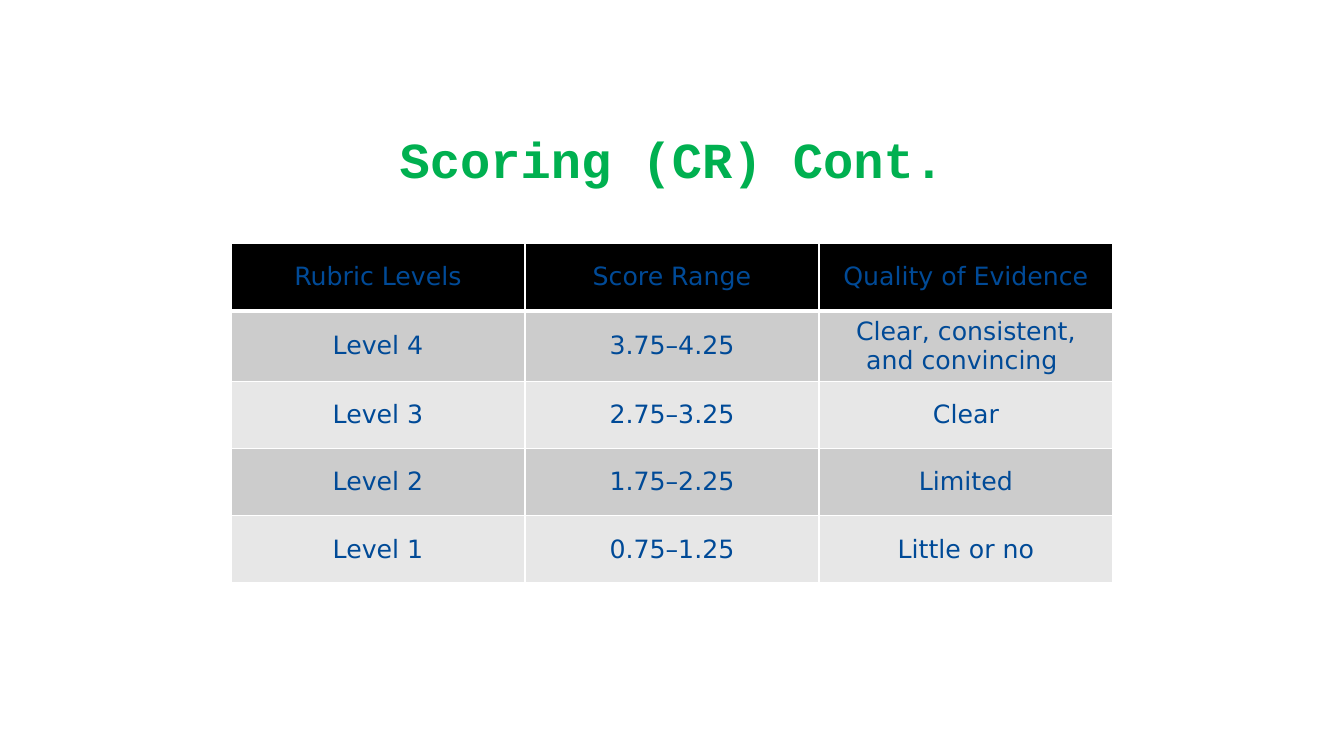
from dataclasses import dataclass

from lxml import etree
from pptx import Presentation
from pptx.dml.color import RGBColor
from pptx.enum.text import MSO_ANCHOR, PP_ALIGN
from pptx.oxml.ns import qn
from pptx.util import Inches, Pt

CENTER = PP_ALIGN.CENTER
MIDDLE = MSO_ANCHOR.MIDDLE
BOTTOM = MSO_ANCHOR.BOTTOM
BLANK = 6
GRID_COLS, GRID_ROWS = 160, 90

RUBRIC = [
    ("Rubric Levels", "Score Range", "Quality of Evidence"),
    ("Level 4", "3.75–4.25", "Clear, consistent, and convincing "),
    ("Level 3", "2.75–3.25", "Clear"),
    ("Level 2", "1.75–2.25", "Limited"),
    ("Level 1", "0.75–1.25", "Little or no"),
]


@dataclass(frozen=True)
class Theme:
    title_font: str = "Courier New"
    title_size: float = 36
    title_color: str = "00B050"
    body_font: str = "DejaVu Sans"
    body_size: float = 18
    body_color: str = "004A97"
    header_fill: str = "000000"
    band_fills: tuple = ("CCCCCC", "E7E7E7")
    border_color: str = "FFFFFF"
    border: float = 1
    header_border: float = 3


class SlideBuilder:
    def __init__(self, prs, theme):
        self.theme = theme
        self.col = prs.slide_width / GRID_COLS
        self.row = prs.slide_height / GRID_ROWS
        self.s = prs.slides.add_slide(prs.slide_layouts[BLANK])

    def box(self, left, top, width, height):
        return (round(left * self.col), round(top * self.row),
                round(width * self.col), round(height * self.row))

    def set_text(self, p, text, font, size, color, bold=False):
        p.text = text
        p.alignment = CENTER
        for r in p.runs:
            r.font.name = font
            r.font.size = Pt(size)
            r.font.bold = bold
            r.font.color.rgb = RGBColor.from_string(color)

    def title(self, text, *area):
        t = self.theme
        tf = self.s.shapes.add_textbox(*self.box(*area)).text_frame
        tf.word_wrap = True
        tf.vertical_anchor = BOTTOM
        p = tf.paragraphs[0]
        self.set_text(p, text, t.title_font, t.title_size, t.title_color, True)
        p.line_spacing = 0.8

    def borders(self, cell, bottom):
        t = self.theme
        tc_pr = cell._tc.get_or_add_tcPr()
        widths = {"lnL": t.border, "lnR": t.border, "lnT": t.border, "lnB": bottom}
        for side, width in widths.items():
            ln = etree.SubElement(tc_pr, qn(f"a:{side}"), w=str(Pt(width)))
            fill = etree.SubElement(ln, qn("a:solidFill"))
            etree.SubElement(fill, qn("a:srgbClr"), val=t.border_color)

    def table(self, rows, *area):
        t = self.theme
        left, top, width, height = self.box(*area)
        tbl = self.s.shapes.add_table(
            len(rows), len(rows[0]), left, top, width, height).table
        for i, values in enumerate(rows):
            fill = t.band_fills[(i - 1) % 2] if i else t.header_fill
            bottom = t.border if i else t.header_border
            for j, value in enumerate(values):
                cell = tbl.cell(i, j)
                self.borders(cell, bottom)
                cell.fill.solid()
                cell.fill.fore_color.rgb = RGBColor.from_string(fill)
                cell.vertical_anchor = MIDDLE
                self.set_text(cell.text_frame.paragraphs[0], value,
                              t.body_font, t.body_size, t.body_color)


def main():
    prs = Presentation()
    prs.slide_width = Inches(13.33)
    prs.slide_height = Inches(7.5)
    slide = SlideBuilder(prs, Theme())
    slide.title("Scoring (CR) Cont.", 10, 4, 140, 19)
    slide.table(RUBRIC, 27.5, 29, 105, 40)
    prs.save("out.pptx")


if __name__ == "__main__":
    main()
